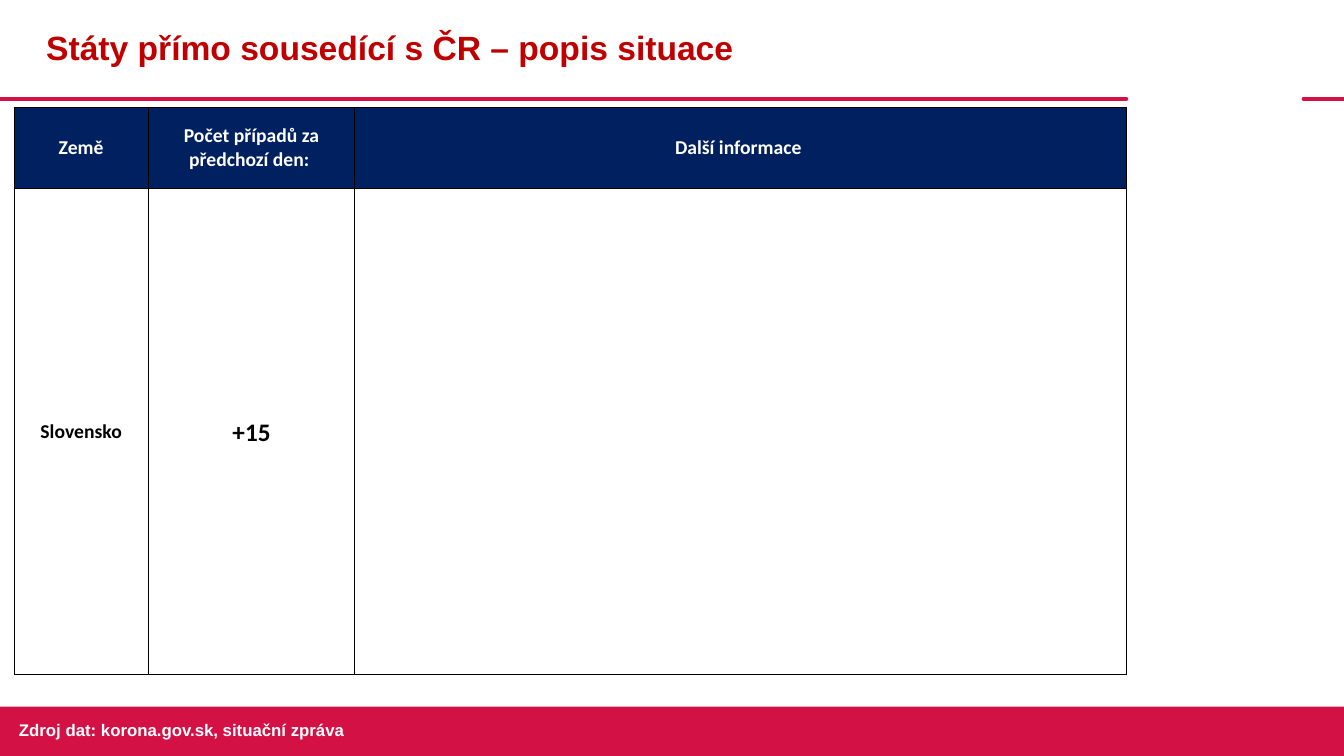
from dataclasses import dataclass

from lxml.etree import SubElement
from pptx import Presentation
from pptx.dml.color import RGBColor
from pptx.enum.shapes import MSO_CONNECTOR as Connector, MSO_SHAPE as Shape
from pptx.enum.text import MSO_ANCHOR as Anchor, PP_ALIGN as Align
from pptx.oxml.ns import qn
from pptx.util import Inches, Pt

COLORS = {
    "red": "D31145",
    "title": "C00000",
    "navy": "002060",
    "white": "FFFFFF",
    "black": "000000",
}
SLIDE_WIDTH, SLIDE_HEIGHT = 13.33, 7.5
RULE_Y = 0.98
FOOTER_TOP = 7.01


@dataclass
class TextStyle:
    font: str
    size: float
    color: str


@dataclass
class CellSpec:
    text: str
    style: TextStyle
    fill: str | None = None
    line_spacing: float | None = None  # points
    margin_top: float = 0.05


TITLE = TextStyle("Arial", 24, "title")
SOURCE = TextStyle("Arial", 12, "white")
HEADER = TextStyle("Calibri", 14, "white")
COUNTRY = TextStyle("Calibri", 14, "black")
COUNT = TextStyle("Calibri", 18, "black")

COLUMN_WIDTHS = [1.33, 2.05, 7.65]
ROW_HEIGHTS = [0.8, 4.82]
ROWS = [
    [CellSpec(text, HEADER, "navy")
     for text in ("Země", "Počet případů za předchozí den: ", "Další informace ")],
    [CellSpec("Slovensko", COUNTRY),
     CellSpec("+15", COUNT, line_spacing=12, margin_top=0.22),
     CellSpec("", COUNTRY)],
]


def rgb(name: str) -> RGBColor:
    return RGBColor.from_string(COLORS[name])


def add_run(paragraph, text: str, style: TextStyle) -> None:
    run = paragraph.add_run()
    run.text = text
    run.font.name = style.font
    run.font.size = Pt(style.size)
    run.font.bold = True
    run.font.color.rgb = rgb(style.color)


def add_rule(slide, start: float, end: float) -> None:
    rule = slide.shapes.add_connector(
        Connector.STRAIGHT, Inches(start), Inches(RULE_Y), Inches(end), Inches(RULE_Y))
    rule.line.color.rgb = rgb("red")
    rule.line.width = Pt(3)
    properties = rule._element.spPr
    properties.find(qn("a:ln")).set("cap", "rnd")
    SubElement(properties, qn("a:effectLst"))


def add_text(slide, box: tuple[float, ...], text: str, style: TextStyle,
             anchor=Anchor.TOP, line_spacing: float = 1.0) -> None:
    frame = slide.shapes.add_textbox(*map(Inches, box)).text_frame
    frame.word_wrap = True
    frame.vertical_anchor = anchor
    frame.paragraphs[0].line_spacing = line_spacing
    add_run(frame.paragraphs[0], text, style)


def add_borders(cell) -> None:
    properties = cell._tc.get_or_add_tcPr()
    for position, side in enumerate(("a:lnL", "a:lnR", "a:lnT", "a:lnB")):
        border = properties.makeelement(qn(side), {"w": str(Pt(1))})
        fill = SubElement(border, qn("a:solidFill"))
        SubElement(fill, qn("a:srgbClr"), val=COLORS["black"])
        properties.insert(position, border)


def fill_cell(cell, spec: CellSpec) -> None:
    if spec.fill:
        cell.fill.solid()
        cell.fill.fore_color.rgb = rgb(spec.fill)
    else:
        cell.fill.background()
    add_borders(cell)
    cell.vertical_anchor = Anchor.MIDDLE
    cell.margin_top = Inches(spec.margin_top)
    if spec.text:
        paragraph = cell.text_frame.paragraphs[0]
        paragraph.alignment = Align.CENTER
        if spec.line_spacing:
            paragraph.line_spacing = Pt(spec.line_spacing)
        add_run(paragraph, spec.text, spec.style)


def add_situation_table(slide) -> None:
    table = slide.shapes.add_table(
        len(ROWS), len(COLUMN_WIDTHS), Inches(0.14), Inches(1.07),
        Inches(sum(COLUMN_WIDTHS)), Inches(sum(ROW_HEIGHTS))).table
    table.horz_banding = False
    for column, width in zip(table.columns, COLUMN_WIDTHS):
        column.width = Inches(width)
    for row, height, specs in zip(table.rows, ROW_HEIGHTS, ROWS):
        row.height = Inches(height)
        for cell, spec in zip(row.cells, specs):
            fill_cell(cell, spec)


def main() -> None:
    presentation = Presentation()
    presentation.slide_width = Inches(SLIDE_WIDTH)
    presentation.slide_height = Inches(SLIDE_HEIGHT)
    slide = presentation.slides.add_slide(presentation.slide_layouts[6])

    # Header rule, with a gap on the right
    add_rule(slide, 0, 11.17)
    add_rule(slide, 12.93, SLIDE_WIDTH)

    # Footer band
    footer = slide.shapes.add_shape(
        Shape.RECTANGLE, 0, Inches(FOOTER_TOP),
        Inches(SLIDE_WIDTH), Inches(SLIDE_HEIGHT - FOOTER_TOP))
    footer.shadow.inherit = False
    footer.fill.solid()
    footer.fill.fore_color.rgb = rgb("red")
    footer.line.fill.background()

    # Title and data source
    add_text(slide, (0.36, 0, 10.81, RULE_Y),
             "Státy přímo sousedící s ČR – popis situace", TITLE, Anchor.MIDDLE, 0.9)
    add_text(slide, (0.09, 7.09, 8.46, 0.3),
             "Zdroj dat: korona.gov.sk, situační zpráva", SOURCE)

    # Situation by country
    add_situation_table(slide)

    presentation.save("out.pptx")


if __name__ == "__main__":
    main()
